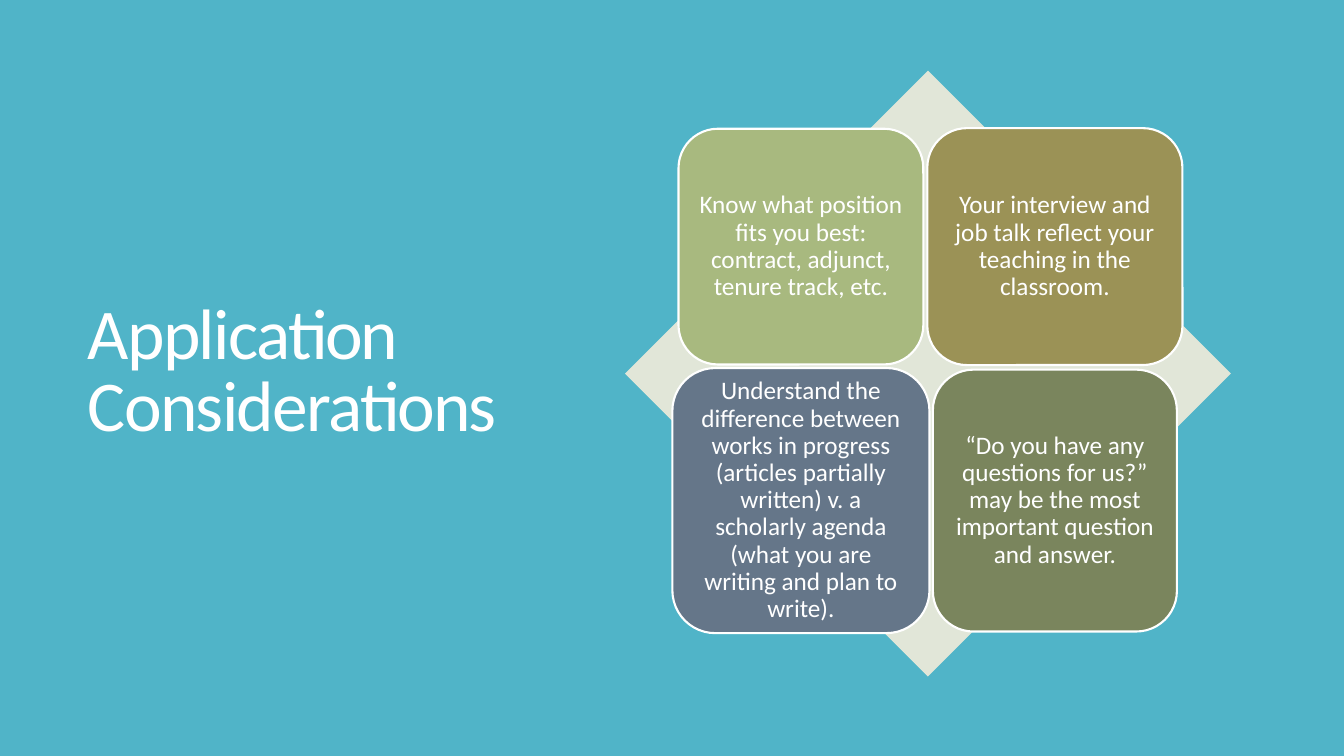
from pptx import Presentation
from pptx.dml.color import RGBColor
from pptx.enum.shapes import MSO_SHAPE
from pptx.enum.text import MSO_ANCHOR, PP_ALIGN
from pptx.oxml.ns import qn
from pptx.util import Cm, Pt

HUES = {
    "back": "50B4C8",
    "white": "FFFFFF",
    "pale": "E1E6D8",
    "green": "A8B97F",
    "gold": "9B9256",
    "slate": "657689",
    "olive": "7A855D",
}

CARDS = [
    ("Know what position fits you best: contract, adjunct, tenure track, etc.",
     "green", 6.17, 5.94),
    ("Your interview and job talk reflect your teaching in the classroom.",
     "gold", 6.43, 5.97),
    ("Understand the difference between works in progress (articles partially "
     "written) v. a scholarly agenda (what you are writing and plan to write).",
     "slate", 6.48, 6.68),
    ("“Do you have any questions for us?” may be the most important question "
     "and answer.",
     "olive", 6.15, 6.6),
]


def tint(name):
    return RGBColor.from_string(HUES[name])


def write(shape, text, size=18, align=PP_ALIGN.LEFT, lead=0.9, inset=None, track=None):
    frame = shape.text_frame
    frame.word_wrap = True
    frame.vertical_anchor = MSO_ANCHOR.MIDDLE
    if inset is not None:
        frame.margin_left = frame.margin_right = Cm(inset)
        frame.margin_top = frame.margin_bottom = Cm(inset)
    para = frame.paragraphs[0]
    para.alignment = align
    para.line_spacing = lead
    run = para.add_run()
    run.text = text
    run.font.size = Pt(size)
    run.font.name = "Calibri"
    run.font.color.rgb = tint("white")
    if track is not None:
        for props in shape.element.iter(qn("a:rPr")):
            props.set("spc", str(round(track * 100)))


def block(slide, kind, hue, left, top, width, height):
    shape = slide.shapes.add_shape(kind, Cm(left), Cm(top), Cm(width), Cm(height))
    shape.shadow.inherit = False
    shape.fill.solid()
    shape.fill.fore_color.rgb = tint(hue)
    shape.line.fill.background()
    return shape


def title(slide, left, top, width, height):
    box = slide.shapes.add_textbox(Cm(left), Cm(top), Cm(width), Cm(height))
    write(box, "Application Considerations", size=51, lead=0.85, track=-1.2)


def matrix(slide, left, top, side):
    block(slide, MSO_SHAPE.DIAMOND, "pale", left, top, side, side)
    mid_x, mid_y = left + side / 2, top + side / 2
    shift = 3.2
    for index, (text, hue, width, height) in enumerate(CARDS):
        row, col = divmod(index, 2)
        x = mid_x + (2 * col - 1) * shift - width / 2
        y = mid_y + (2 * row - 1) * shift - height / 2
        card = block(slide, MSO_SHAPE.ROUNDED_RECTANGLE, hue, x, y, width, height)
        card.line.color.rgb = tint("white")
        card.line.width = Pt(1.5)
        write(card, text, align=PP_ALIGN.CENTER, inset=0.19)


def main():
    deck = Presentation()
    deck.slide_width, deck.slide_height = Cm(33.87), Cm(19.05)
    slide = deck.slides.add_slide(deck.slide_layouts[6])
    slide.background.fill.solid()
    slide.background.fill.fore_color.rgb = tint("back")
    title(slide, 1.96, 1.78, 11.1, 15.27)
    matrix(slide, 15.75, 1.78, 15.27)
    deck.save("out.pptx")


if __name__ == "__main__":
    main()
